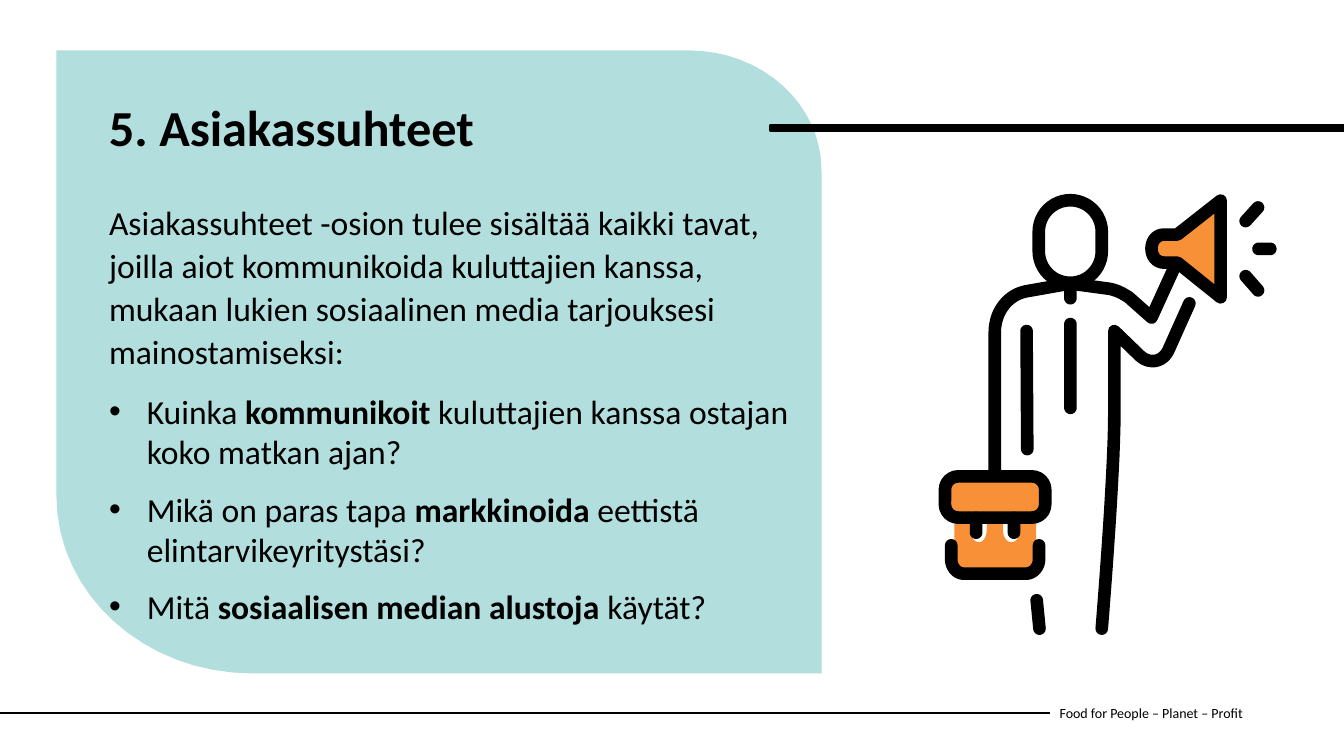
"""Builds the slide on customer relationships, with a drawn figure holding a megaphone."""
import math

import lxml.etree
import pptx
import pptx.dml.color
import pptx.enum.shapes
import pptx.enum.text
import pptx.oxml.ns
import pptx.util

Pt = pptx.util.Pt
Preset = pptx.enum.shapes.MSO_SHAPE
qn = pptx.oxml.ns.qn

BLACK = pptx.dml.color.RGBColor(0x00, 0x00, 0x00)
MINT = pptx.dml.color.RGBColor(0xB2, 0xDE, 0xDD)
ORANGE = pptx.dml.color.RGBColor(0xF7, 0x90, 0x37)
FONT = "Calibri"
STROKE = 9

INTRO = ("Asiakassuhteet -osion tulee sisältää kaikki tavat, joilla aiot kommunikoida "
         "kuluttajien kanssa, mukaan lukien sosiaalinen media tarjouksesi mainostamiseksi:")
QUESTIONS = [
    ("Kuinka ", "kommunikoit ", "kuluttajien kanssa ostajan koko matkan ajan?"),
    ("Mikä on paras tapa ", "markkinoida ", "eettistä elintarvikeyritystäsi?"),
    ("Mitä ", "sosiaalisen median alustoja ", "käytät?"),
]

# Each step is a point (x, y) or a cubic curve (x1, y1, x2, y2, x, y).
CARD = [(586.8, 481), (180, 481), (103, 481, 40.3, 424.1, 40.3, 354.2), (40.3, 36),
        (491.8, 36), (544.3, 36, 586.8, 74.2, 586.8, 121.7)]
HORN = [(871.9, 143.3), (841, 167.6), (831.6, 167.6),
        (819.5, 167.6, 819.5, 187.6, 831.6, 187.6), (841, 187.6), (871.9, 212.4)]
SHOULDERS = [(710.6, 338), (710.6, 237.6), (710.6, 222.5, 720, 210.6, 733, 208.1),
             (764.6, 202.5), (792.7, 206.3), (797.8, 207.4, 802, 209.5, 806.4, 212.4),
             (822.6, 226.8), (838, 193)]
RAISED_ARM = [(849.6, 216.7), (834.8, 249.8), (830.9, 258.5, 821.5, 260.6, 814.3, 254.2),
              (796, 236.5), (796, 295.9), (796, 339.8, 787, 449, 787, 449)]
CASE_RIM = [(679.5, 389.5), (679.5, 399.6), (679.5, 405, 683.5, 409.7, 688.3, 409.7),
            (733, 409.7), (738, 409.7, 742.2, 405, 742.2, 399.6), (742.2, 389.5)]
CASE_FILL = [(681.8, 368.6), (693.4, 368.6), (693.4, 378),
             (693.4, 390.5, 704.9, 390.5, 704.9, 378), (704.9, 368.6), (716.4, 368.6),
             (716.4, 378), (716.4, 390.5, 728.6, 390.5, 728.6, 378), (728.6, 368.6),
             (740.2, 368.6), (740.2, 406.8), (681.8, 406.8)]
STRAIGHT_STROKES = [
    (764.6, 204, 764.6, 213), (764.6, 231.5, 764.6, 291.3),
    (733.3, 236.5, 733.8, 320.8), (740.5, 428.8, 742.5, 449),
    (697.3, 370, 697.3, 380.5), (724.3, 370, 724.3, 380.5),
    (889.8, 157.9, 898.6, 148.2), (899, 177.8, 907.4, 177.8),
    (889.8, 197.3, 898.6, 207.4),
]


def curve_points(start, curve, steps=16):
    x1, y1, x2, y2, x3, y3 = curve
    points = []
    for step in range(1, steps + 1):
        t = step / steps
        weights = ((1 - t) ** 3, 3 * t * (1 - t) ** 2, 3 * t * t * (1 - t), t ** 3)
        points.append(tuple(sum(w * v for w, v in zip(weights, values))
                            for values in ((start[0], x1, x2, x3), (start[1], y1, y2, y3))))
    return points


def pill_points(ends, width, steps=12):
    x1, y1, x2, y2 = ends
    heading = math.atan2(y2 - y1, x2 - x1)
    points = []
    for x, y, facing in ((x2, y2, heading), (x1, y1, heading + math.pi)):
        for step in range(steps + 1):
            angle = facing - math.pi / 2 + math.pi * step / steps
            points.append((x + width / 2 * math.cos(angle), y + width / 2 * math.sin(angle)))
    return points


def style_line(line, width):
    line.color.rgb = BLACK
    line.width = Pt(width)


def round_ends(line, width):
    style_line(line, width)
    outline = line._get_or_add_ln()
    outline.set("cap", "rnd")
    lxml.etree.SubElement(outline, qn("a:round"))


def style_shape(shape, fill=None, stroke=None):
    shape.shadow.inherit = False
    if fill is None:
        shape.fill.background()
    else:
        shape.fill.solid()
        shape.fill.fore_color.rgb = fill
    if stroke is None:
        shape.line.fill.background()
    else:
        round_ends(shape.line, stroke)


def add_outline(shapes, steps, fill=None, stroke=None, close=True):
    points = [steps[0]]
    for step in steps[1:]:
        points.extend([step] if len(step) == 2 else curve_points(points[-1], step))
    corners = [(Pt(x), Pt(y)) for x, y in points]
    builder = shapes.build_freeform(*corners[0])
    builder.add_line_segments(corners[1:], close=close)
    shape = builder.convert_to_shape()
    style_shape(shape, fill, stroke)
    return shape


def add_box(shapes, preset, left, top, width, height, fill=None, stroke=None):
    shape = shapes.add_shape(preset, Pt(left), Pt(top), Pt(width), Pt(height))
    style_shape(shape, fill, stroke)
    return shape


def add_line(shapes, ends, width):
    connector = shapes.add_connector(pptx.enum.shapes.MSO_CONNECTOR.STRAIGHT,
                                     *(Pt(value) for value in ends))
    style_line(connector.line, width)
    lxml.etree.SubElement(connector._element.spPr, qn("a:effectLst"))


def style_run(run, size, bold=False):
    run.font.name = FONT
    run.font.size = Pt(size)
    run.font.bold = bold
    run.font.color.rgb = BLACK


def add_text_box(shapes, left, top, width, height):
    frame = shapes.add_textbox(Pt(left), Pt(top), Pt(width), Pt(height)).text_frame
    frame.word_wrap = True
    return frame


def place_title(title, card):
    card._element.addnext(title._element)
    title.left, title.top, title.width, title.height = Pt(70.6), Pt(69.8), Pt(465.8), Pt(78.5)
    frame = title.text_frame
    frame.text = "5. Asiakassuhteet"
    frame.auto_size = pptx.enum.text.MSO_AUTO_SIZE.NONE
    frame.vertical_anchor = pptx.enum.text.MSO_ANCHOR.TOP
    heading = frame.paragraphs[0]
    heading.alignment = pptx.enum.text.PP_ALIGN.LEFT
    heading.line_spacing = 0.9
    style_run(heading.runs[0], 36, bold=True)


def add_question(frame, parts):
    question = frame.add_paragraph()
    question.space_before = question.space_after = Pt(6)
    properties = question._p.get_or_add_pPr()
    properties.set("marL", str(Pt(27)))
    properties.set("indent", str(-Pt(27)))
    lxml.etree.SubElement(properties, qn("a:buFont")).set("typeface", "Arial")
    lxml.etree.SubElement(properties, qn("a:buChar")).set("char", "•")
    for position, part in enumerate(parts):
        run = question.add_run()
        run.text = part
        style_run(run, 24, bold=position == 1)


def add_body(shapes):
    frame = add_text_box(shapes, 70.8, 138.5, 511.2, 332)
    intro = frame.paragraphs[0]
    intro.text = INTRO
    intro.line_spacing = 1.07
    intro.space_before, intro.space_after = Pt(10), Pt(8)
    style_run(intro.runs[0], 24)
    for parts in QUESTIONS:
        add_question(frame, parts)


def add_footer(shapes):
    add_line(shapes, (0, 509, 749.8, 509), 1.5)
    frame = add_text_box(shapes, 749.8, 494.6, 196.6, 28.8)
    frame.text = "Food for People – Planet – Profit"
    frame.vertical_anchor = pptx.enum.text.MSO_ANCHOR.MIDDLE
    style_run(frame.paragraphs[0].runs[0], 10)


def add_announcer(shapes):
    announcer = shapes.add_group_shape().shapes
    add_outline(announcer, CASE_FILL, fill=ORANGE)
    for limb in (SHOULDERS, RAISED_ARM, CASE_RIM):
        add_outline(announcer, limb, stroke=STROKE, close=False)
    add_outline(announcer, HORN, fill=ORANGE, stroke=STROKE)
    head = add_box(announcer, Preset.ROUNDED_RECTANGLE, 742, 143, 45, 59, stroke=STROKE)
    head.adjustments[0] = 0.5
    case_lid = add_box(announcer, Preset.ROUNDED_RECTANGLE, 675, 340.3, 71.6, 29.4,
                       ORANGE, STROKE)
    case_lid.adjustments[0] = 0.32
    for ends in STRAIGHT_STROKES:
        add_outline(announcer, pill_points(ends, STROKE), fill=BLACK)


def main():
    presentation = pptx.Presentation()
    presentation.slide_width, presentation.slide_height = Pt(960), Pt(540)
    slide = presentation.slides.add_slide(presentation.slide_layouts[5])
    shapes = slide.shapes
    add_footer(shapes)
    card = add_outline(shapes, CARD, fill=MINT)
    add_box(shapes, Preset.RECTANGLE, 550, 89.7, 410, 3.6, BLACK, 1.93)
    place_title(shapes.title, card)
    add_body(shapes)
    add_announcer(shapes)
    presentation.save("out.pptx")


if __name__ == "__main__":
    main()
